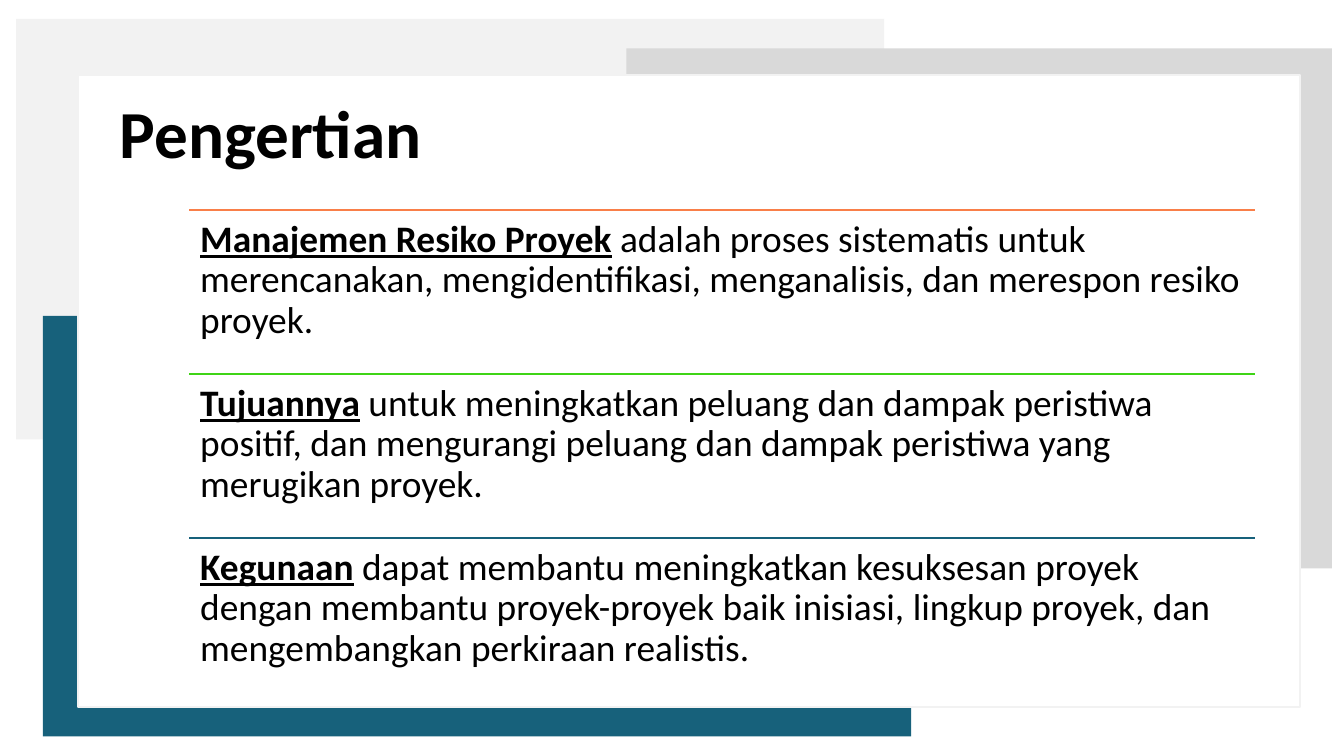
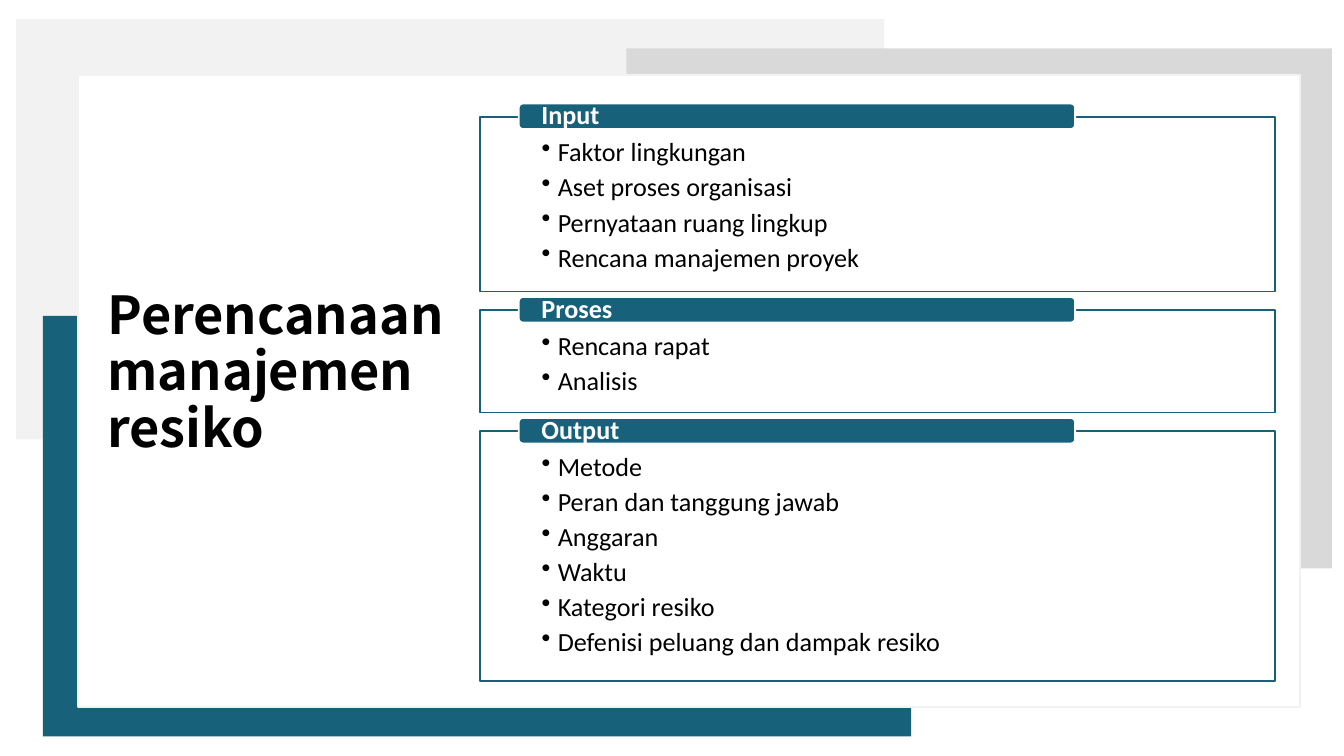
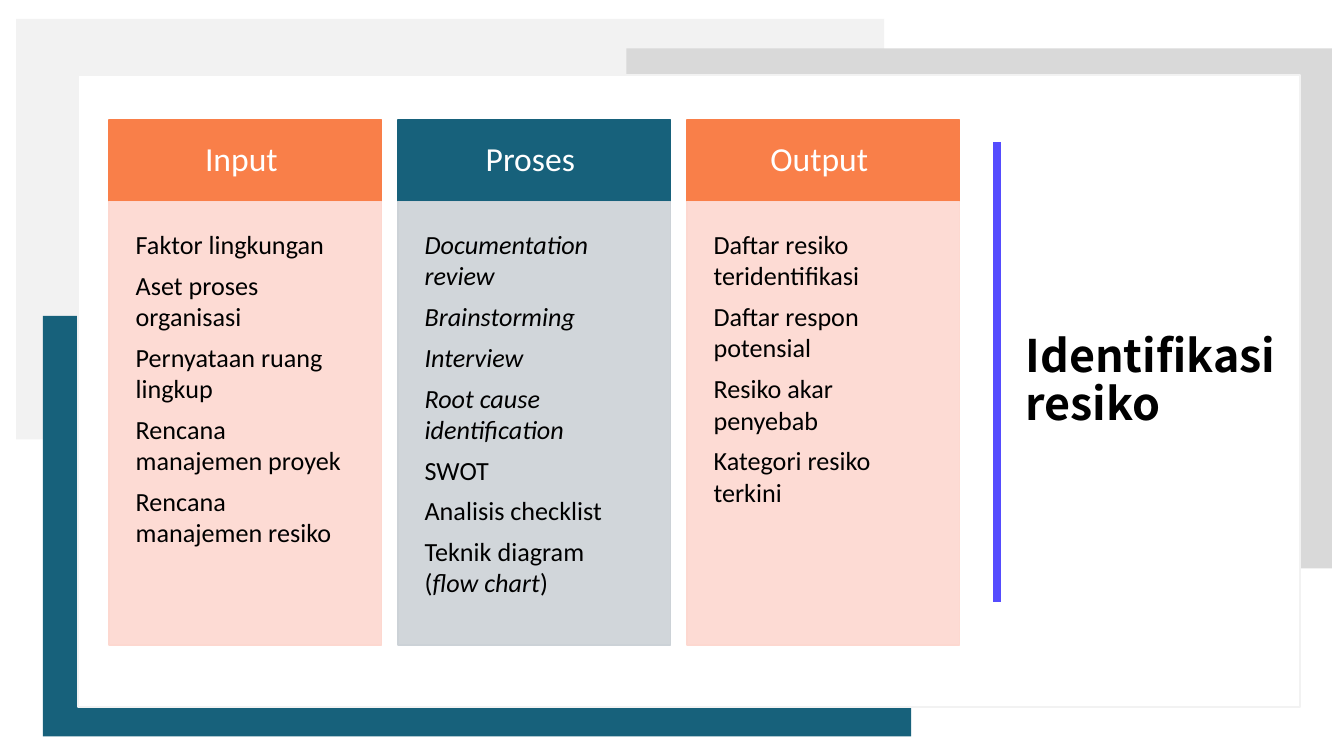
"""Build three slides on project risk management."""
from dataclasses import dataclass
from typing import NamedTuple

from lxml import etree
from pptx import Presentation
from pptx.dml.color import RGBColor
from pptx.enum.shapes import MSO_CONNECTOR, MSO_SHAPE
from pptx.enum.text import MSO_ANCHOR, MSO_AUTO_SIZE, PP_ALIGN
from pptx.oxml.ns import qn
from pptx.util import Inches, Pt

RECT, ROUNDED = MSO_SHAPE.RECTANGLE, MSO_SHAPE.ROUNDED_RECTANGLE
STRAIGHT = MSO_CONNECTOR.STRAIGHT
TOP, MIDDLE = MSO_ANCHOR.TOP, MSO_ANCHOR.MIDDLE
LEFT, CENTER = PP_ALIGN.LEFT, PP_ALIGN.CENTER
NO_FIT = MSO_AUTO_SIZE.NONE
TITLE_ONLY = 5


@dataclass(frozen=True)
class Theme:
    """Colours, fonts and type sizes of the deck."""
    white: str = "FFFFFF"
    black: str = "000000"
    pale: str = "F2F2F2"
    grey: str = "D9D9D9"
    teal: str = "17617B"
    orange: str = "F97F49"
    green: str = "3FD416"
    violet: str = "554CFE"
    peach: str = "FDD8D0"
    mist: str = "CCD2D7"
    body_font: str = "Calibri"
    display_font: str = "Noto Sans CJK SC"
    list_size: int = 14
    header_size: int = 18
    statement_size: int = 20
    definition_title: int = 36
    planning_title: int = 28
    identification_title: int = 24


THEME = Theme()


class Area(NamedTuple):
    """Left, top, width and height in inches."""
    left: float
    top: float
    width: float
    height: float


class Insets(NamedTuple):
    """Text margins in inches."""
    left: float = 0.1
    top: float = 0.05
    right: float = 0.1
    bottom: float = 0.05


class Span(NamedTuple):
    """A stretch of text with its emphasis."""
    text: str
    italic: bool = False
    strong: bool = False


@dataclass(frozen=True)
class TextStyle:
    """Look of a block of paragraphs."""
    size: int
    color: str = THEME.black
    font: str = THEME.body_font
    bold: bool = False
    align: PP_ALIGN = LEFT
    anchor: MSO_ANCHOR = TOP
    line_spacing: float = 1.0
    space_after: float = 0
    bulleted: bool = False
    insets: Insets = Insets()


class Statement(NamedTuple):
    """A ruled statement with an emphasised opening."""
    color: str
    opening: str
    rest: str


class Group(NamedTuple):
    """A headed list in a framed box."""
    header: str
    items: list[str]
    height: float


class Column(NamedTuple):
    """A headed column with its colours."""
    header: str
    color: str
    tint: str
    items: list[list[Span]]


STATEMENT = TextStyle(THEME.statement_size, line_spacing=0.9,
                      insets=Insets(0.08, 0.08, 0.08, 0.08))
GROUP_LIST = TextStyle(THEME.list_size, space_after=2, bulleted=True,
                       insets=Insets(0.46, 0.14, 0.46, 0.11))
GROUP_TAB = TextStyle(THEME.list_size, THEME.white, bold=True, anchor=MIDDLE,
                      line_spacing=0.9, insets=Insets(0.16, 0, 0.16, 0))
COLUMN_LIST = TextStyle(THEME.list_size, space_after=5,
                        insets=Insets(0.2, 0.2, 0.2, 0.2))
COLUMN_HEADER = TextStyle(THEME.header_size, THEME.white, align=CENTER,
                          anchor=MIDDLE, line_spacing=0.9,
                          insets=Insets(0.16, 0.16, 0.16, 0.16))

STATEMENTS = [
    Statement(THEME.orange, "Manajemen Resiko Proyek",
              " adalah proses sistematis untuk merencanakan, mengidentifikasi, "
              "menganalisis, dan merespon resiko proyek."),
    Statement(THEME.green, "Tujuannya",
              " untuk meningkatkan peluang dan dampak peristiwa positif, dan "
              "mengurangi peluang dan dampak peristiwa yang merugikan proyek."),
    Statement(THEME.teal, "Kegunaan",
              " dapat membantu meningkatkan kesuksesan proyek dengan membantu "
              "proyek-proyek baik inisiasi, lingkup proyek, dan mengembangkan "
              "perkiraan realistis."),
]
GROUPS = [
    Group("Input", ["Faktor lingkungan", "Aset proses organisasi",
                    "Pernyataan ruang lingkup", "Rencana manajemen proyek"], 1.3),
    Group("Proses", ["Rencana rapat", "Analisis"], 0.76),
    Group("Output", ["Metode", "Peran dan tanggung jawab", "Anggaran", "Waktu",
                     "Kategori resiko", "Defenisi peluang dan dampak resiko"], 1.86),
]
COLUMNS = [
    Column("Input ", THEME.orange, THEME.peach,
           [[Span("Faktor lingkungan")], [Span("Aset proses organisasi")],
            [Span("Pernyataan ruang lingkup")], [Span("Rencana manajemen proyek")],
            [Span("Rencana manajemen resiko")]]),
    Column("Proses ", THEME.teal, THEME.mist,
           [[Span("Documentation review", True)], [Span("Brainstorming", True)],
            [Span("Interview", True)], [Span("Root cause identification", True)],
            [Span("SWOT")], [Span("Analisis checklist")],
            [Span("Teknik diagram ("), Span("flow chart", True), Span(")")]]),
    Column("Output ", THEME.orange, THEME.peach,
           [[Span("Daftar resiko teridentifikasi")], [Span("Daftar respon potensial")],
            [Span("Resiko akar penyebab")], [Span("Kategori resiko terkini")]]),
]


def rgb(color: str) -> RGBColor:
    """Turn a hex string into a colour."""
    return RGBColor.from_string(color)


def inches(values: tuple) -> list:
    """Turn numbers into lengths."""
    return [Inches(value) for value in values]


def format_frame(frame, style: TextStyle) -> None:
    """Set margins, wrapping and anchoring of a text frame."""
    frame.word_wrap = True
    frame.auto_size = NO_FIT
    frame.vertical_anchor = style.anchor
    (frame.margin_left, frame.margin_top,
     frame.margin_right, frame.margin_bottom) = inches(style.insets)


def format_paragraph(paragraph, style: TextStyle) -> None:
    """Apply a style to one paragraph."""
    paragraph.alignment = style.align
    paragraph.line_spacing = style.line_spacing
    paragraph.space_after = Pt(style.space_after)
    if style.bulleted:
        properties = paragraph._p.get_or_add_pPr()
        properties.set("marL", str(Inches(0.12)))
        properties.set("indent", str(-Inches(0.12)))
        etree.SubElement(properties, qn("a:buChar")).set("char", "•")
    font = paragraph.font
    font.name, font.size, font.bold = style.font, Pt(style.size), style.bold
    font.color.rgb = rgb(style.color)


def write(frame, paragraphs: list[list[Span]], style: TextStyle) -> None:
    """Fill a text frame with styled paragraphs."""
    format_frame(frame, style)
    for index, spans in enumerate(paragraphs):
        paragraph = frame.add_paragraph() if index else frame.paragraphs[0]
        format_paragraph(paragraph, style)
        for span in spans:
            run = paragraph.add_run()
            run.text = span.text
            if style.bulleted:
                run.font.size = Pt(style.size)
            if span.italic:
                run.font.italic = True
            if span.strong:
                run.font.bold = run.font.underline = True


def add_box(page, area: Area, fill: str, line: str | None = None,
            kind: MSO_SHAPE = RECT, opacity: int = 100):
    """Draw a filled shape."""
    box = page.shapes.add_shape(kind, *inches(area))
    box.shadow.inherit = False
    box.fill.solid()
    box.fill.fore_color.rgb = rgb(fill)
    if opacity < 100:
        color = box.element.spPr.find(qn("a:solidFill"))[0]
        etree.SubElement(color, qn("a:alpha")).set("val", str(opacity * 1000))
    if line:
        box.line.color.rgb = rgb(line)
        box.line.width = Pt(1)
    else:
        box.line.fill.background()
    return box


def add_rule(page, start: tuple, end: tuple, color: str, width: float) -> None:
    """Draw a straight line."""
    rule = page.shapes.add_connector(STRAIGHT, *inches(start + end))
    rule.line.color.rgb = rgb(color)
    rule.line.width = Pt(width)
    etree.SubElement(rule.element.spPr, qn("a:effectLst"))


def add_page(deck, title: str, area: Area, size: int,
             font: str = THEME.display_font, insets: Insets = Insets()):
    """Add a slide with the layered backdrop and its title."""
    page = deck.slides.add_slide(deck.slide_layouts[TITLE_ONLY])
    add_box(page, Area(0.12, 0.14, 6.46, 3.13), THEME.pale)
    add_box(page, Area(4.66, 0.36, 5.25, 3.87), THEME.grey)
    add_box(page, Area(0.32, 2.35, 6.46, 3.13), THEME.teal)
    add_box(page, Area(0.58, 0.56, 9.09, 4.7), THEME.white, THEME.pale)
    heading = page.shapes.title
    heading.left, heading.top, heading.width, heading.height = inches(area)
    style = TextStyle(size, font=font, bold=True, anchor=MIDDLE,
                      line_spacing=0.9, insets=insets)
    heading.text_frame.text = title
    format_frame(heading.text_frame, style)
    format_paragraph(heading.text_frame.paragraphs[0], style)
    page.shapes.element.append(heading.element)
    return page


def build_definition(deck) -> None:
    """Build the slide of ruled statements."""
    page = add_page(deck, "Pengertian", Area(0.74, 0.56, 3.3, 0.92),
                    THEME.definition_title, THEME.body_font, Insets(left=0.15))
    left, width, pitch = 1.41, 7.93, 1.22
    for index, statement in enumerate(STATEMENTS):
        top = 1.56 + index * pitch
        add_rule(page, (left, top), (left + width, top), statement.color, 1)
        box = page.shapes.add_textbox(*inches((left, top, width, pitch)))
        spans = [Span(statement.opening, strong=True), Span(statement.rest)]
        write(box.text_frame, [spans], STATEMENT)


def build_planning(deck) -> None:
    """Build the slide of stacked lists."""
    page = add_page(deck, "Perencanaan manajemen \vresiko",
                    Area(0.7, 1.49, 3.23, 2.58), THEME.planning_title)
    top, gap = 0.87, 0.14
    for group in GROUPS:
        frame = add_box(page, Area(3.57, top, 5.92, group.height), THEME.white,
                        THEME.teal, opacity=90)
        write(frame.text_frame, [[Span(item)] for item in group.items], GROUP_LIST)
        tab = add_box(page, Area(3.86, top - 0.1, 4.14, 0.19), THEME.teal,
                      THEME.white, ROUNDED)
        write(tab.text_frame, [[Span(group.header)]], GROUP_TAB)
        top += group.height + gap


def build_identification(deck) -> None:
    """Build the slide of three columns."""
    page = add_page(deck, "Identifikasi \vresiko", Area(7.53, 0.7, 2.14, 4.28),
                    THEME.identification_title)
    for index, column in enumerate(COLUMNS):
        left = 0.81 + index * 2.15
        header = add_box(page, Area(left, 0.89, 2.03, 0.61), column.color, column.color)
        write(header.text_frame, [[Span(column.header)]], COLUMN_HEADER)
        body = add_box(page, Area(left, 1.5, 2.03, 3.3), column.tint, column.tint,
                       opacity=90)
        write(body.text_frame, column.items, COLUMN_LIST)
    add_rule(page, (7.42, 1.06), (7.42, 4.48), THEME.violet, 4.5)


def main() -> None:
    """Build and save the deck."""
    deck = Presentation()
    deck.slide_width = Inches(10)
    deck.slide_height = deck.slide_width * 9 // 16
    build_definition(deck)
    build_planning(deck)
    build_identification(deck)
    deck.save("out.pptx")


if __name__ == "__main__":
    main()
